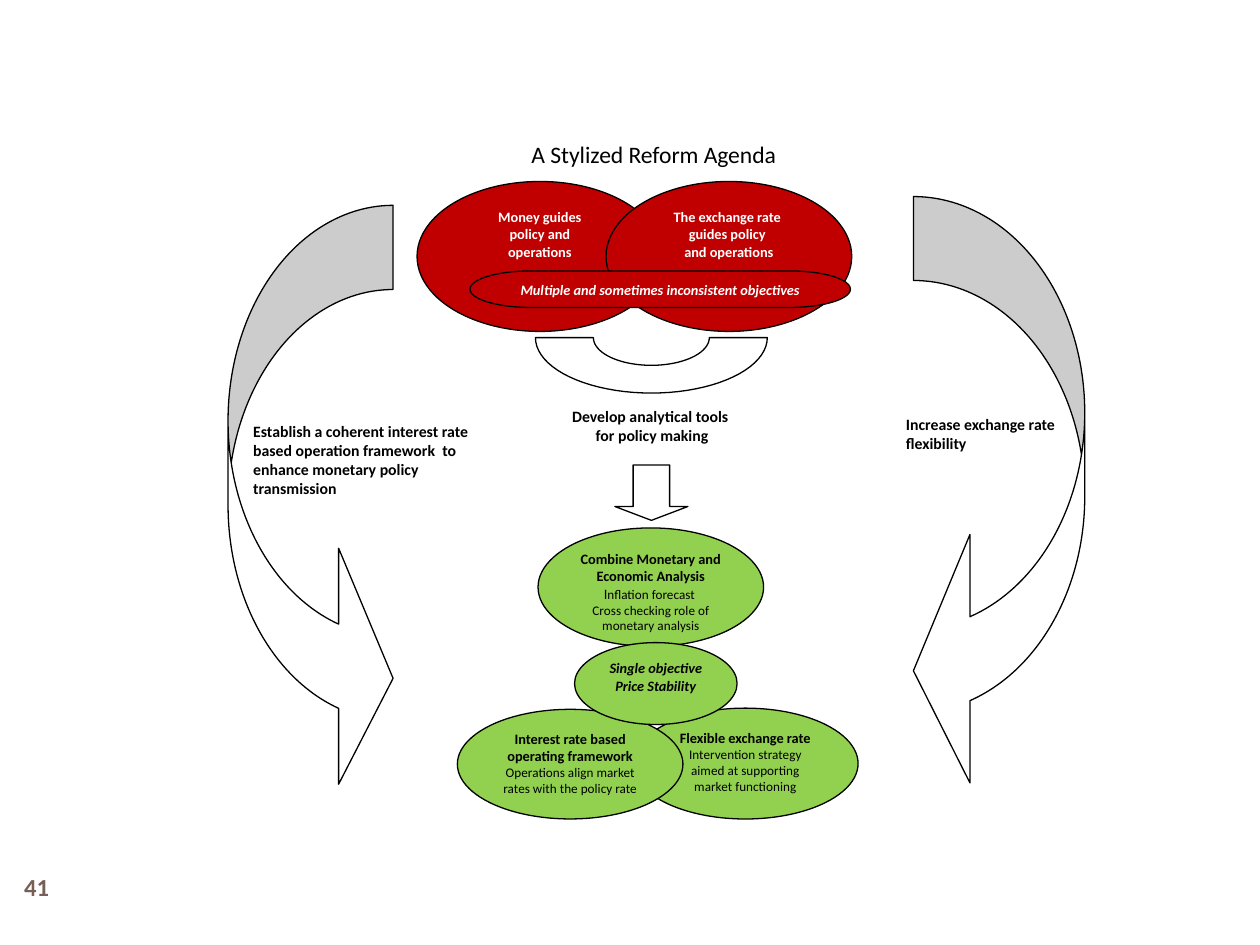
"""Build the slide showing a stylized reform agenda."""
from math import cos, pi, sin

from pptx import Presentation
from pptx.dml.color import RGBColor
from pptx.enum.shapes import MSO_SHAPE as SHAPE
from pptx.enum.text import MSO_ANCHOR as ANCHOR, PP_ALIGN as ALIGN
from pptx.util import Inches, Pt

RED, GREEN, WHITE, BLACK, BROWN = "C00000", "92D050", "FFFFFF", "000000", "775F55"


def paint(s, fill, line):
    s.shadow.inherit = False
    s.fill.solid()
    s.fill.fore_color.rgb = RGBColor.from_string(fill)
    s.line.color.rgb = RGBColor.from_string(line)
    s.line.width = Pt(0.75)


def write(s, paragraphs, color, align=ALIGN.CENTER, italic=False, after=0):
    tf = s.text_frame
    tf.word_wrap = True
    tf.vertical_anchor = ANCHOR.TOP
    for i, runs in enumerate(paragraphs):
        p = tf.paragraphs[0] if i == 0 else tf.add_paragraph()
        p.alignment = align
        p.font.name = "Calibri"
        p.font.italic = italic
        p.font.color.rgb = RGBColor.from_string(color)
        for text, size, bold in runs:
            r = p.add_run()
            r.text = text
            r.font.size = Pt(size)
            r.font.bold = bold
    p.space_after = Pt(after)


prs = Presentation()
prs.slide_width, prs.slide_height = Inches(10), Inches(7.5)
shapes = prs.slides.add_slide(prs.slide_layouts[6]).shapes

flexible = [[("Flexible exchange rate", 8.2, True)],
            [("Intervention strategy aimed at supporting market functioning", 7.5, False)]]
flexibility = [[("Increase exchange rate flexibility", 9, True)]]
framework = [[("Establish a coherent interest rate based operation framework  to "
               "enhance monetary policy transmission", 9, True)]]
money = [[(t, 8.2, True)] for t in ("Money guides", "policy and", "operations")]
analysis = [[("Combine Monetary and Economic Analysis ", 8.2, True), ("I", 8.2, False),
             ("nflation forecast ", 7.5, False)],
            [("Cross checking role of monetary analysis", 7.5, False)]]
interest = [[("Interest rate based operating framework", 8.2, True)],
            [("Operations align market rates with the policy rate", 7.5, False)]]
exchange = [[(t, 8.2, True)] for t in ("The exchange rate ", "guides policy ", "and operations")]
tools = [[(t, 9, True)] for t in ("Develop analytical tools", " for policy making")]
objectives = [[("Multiple and sometimes inconsistent objectives", 8.2, True)]]
stability = [[("Single objective Price Stability", 8.2, True)]]

OVAL, RECT, CURVED = SHAPE.OVAL, SHAPE.RECTANGLE, SHAPE.CURVED_RIGHT_ARROW
C, L = ALIGN.CENTER, ALIGN.LEFT
items = [
    (OVAL, (5.02, 5.62, 1.79, 0.88), GREEN, BLACK, flexible, BLACK, C, False, 0),
    (RECT, (7.12, 3.25, 1.38, 0.94), WHITE, WHITE, flexibility, BLACK, L, False, 0),
    (RECT, (1.94, 3.31, 1.94, 1.12), WHITE, WHITE, framework, BLACK, L, False, 0),
    (OVAL, (3.31, 1.44, 1.95, 1.19), RED, BLACK, money, WHITE, C, False, 7.5),
    (OVAL, (4.27, 4.19, 1.79, 0.94), GREEN, BLACK, analysis, BLACK, C, False, 0),
    (OVAL, (3.63, 5.63, 1.79, 0.87), GREEN, BLACK, interest, BLACK, C, False, 0),
    (OVAL, (4.81, 1.44, 1.95, 1.19), RED, BLACK, exchange, WHITE, C, False, 0),
    (RECT, (3.94, 3.19, 2.44, 0.61), WHITE, WHITE, tools, BLACK, C, False, 0),
    (SHAPE.FLOWCHART_TERMINATOR, (3.73, 2.15, 3.02, 0.29), RED, BLACK, objectives, WHITE, C, True, 7.5),
    (OVAL, (4.56, 5.1, 1.29, 0.65), GREEN, BLACK, stability, BLACK, C, True, 7.5),
]
for kind, box, fill, line, paragraphs, color, align, italic, after in items:
    s = shapes.add_shape(kind, *map(Inches, box))
    paint(s, fill, line)
    tf = s.text_frame
    tf.margin_left = tf.margin_right = Inches(0.07)
    tf.margin_top = tf.margin_bottom = Inches(0.04)
    write(s, paragraphs, color, align, italic, after)

arrows = [
    (CURVED, (1.81, 1.63, 1.31, 4.69), (0.51, 1.43, 0.33), False),
    (CURVED, (7.25, 1.56, 1.36, 4.75), (0.49, 1.45, 0.33), True),
    (SHAPE.DOWN_ARROW, (4.88, 3.69, 0.58, 0.44), (0.5, 0.25), False),
]
for kind, box, adjustments, flipped in arrows:
    s = shapes.add_shape(kind, *map(Inches, box))
    paint(s, WHITE, BLACK)
    for i, value in enumerate(adjustments):
        s.adjustments[i] = value
    if flipped:
        s._element.spPr.find("{*}xfrm").set("flipH", "1")

steps = 40
angles = [pi * i / steps for i in range(steps + 1)]
outer = [(5.17 + 0.92 * cos(a), 2.68 + 0.44 * sin(a)) for a in angles]
inner = [(5.17 + 0.46 * cos(a), 2.68 + 0.22 * sin(a)) for a in reversed(angles)]
points = [(Inches(x), Inches(y)) for x, y in outer + inner]
builder = shapes.build_freeform(*points[0])
builder.add_line_segments(points[1:], close=True)
paint(builder.convert_to_shape(), WHITE, BLACK)

s = shapes.add_textbox(Inches(4.12), Inches(1.06), Inches(2.44), Inches(0.33))
write(s, [[("A Stylized Reform Agenda", 13.5, False)]], BLACK, L)
s = shapes.add_textbox(Inches(0), Inches(6.83), Inches(0.58), Inches(0.42))
write(s, [[("41", 14, True)]], BROWN)
s.text_frame.vertical_anchor = ANCHOR.MIDDLE

prs.save("out.pptx")
